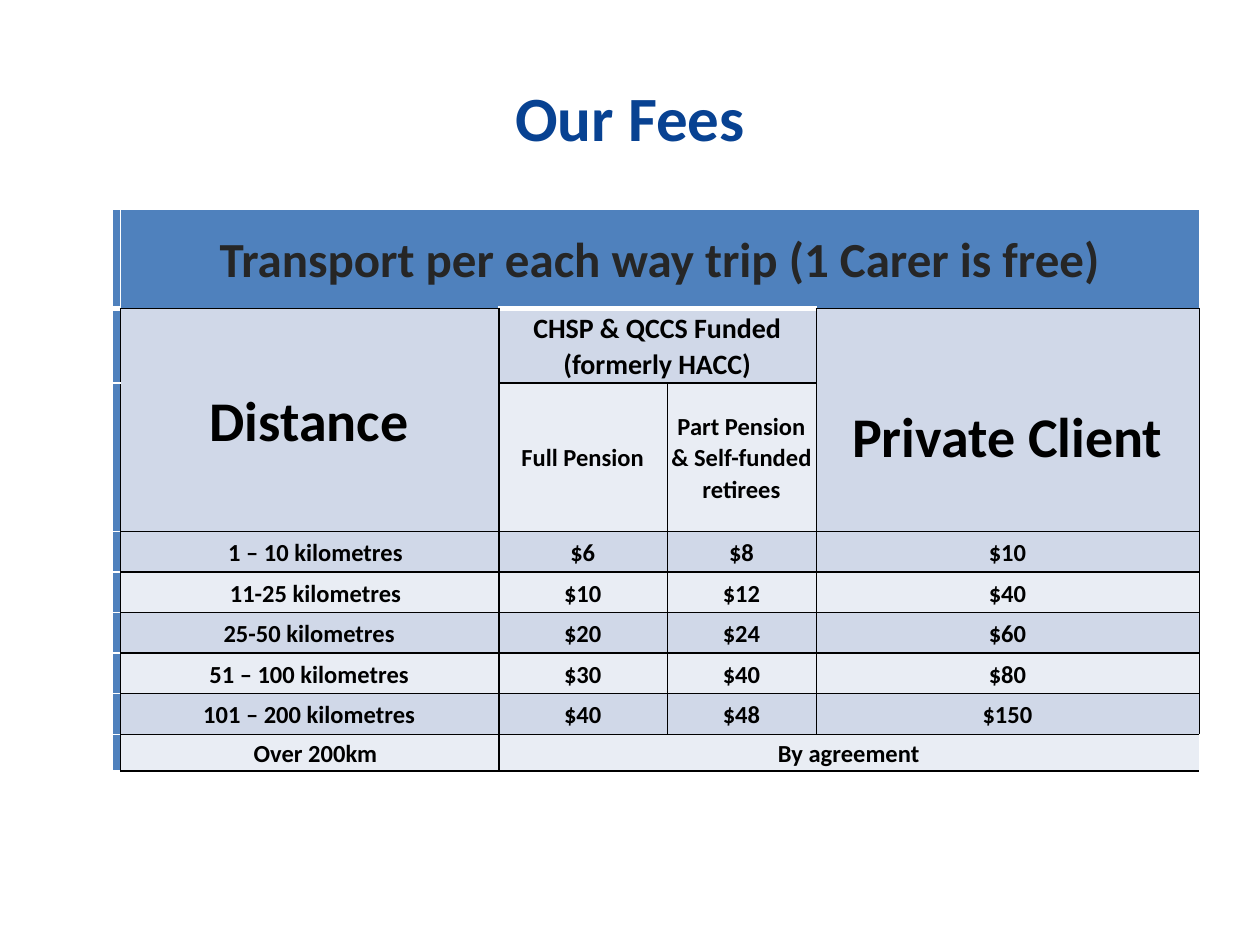
"""Build the transport fee slide."""
from dataclasses import dataclass, field
from typing import Any

from lxml.etree import SubElement
from pptx import Presentation
from pptx.dml.color import RGBColor
from pptx.enum.text import MSO_ANCHOR, PP_ALIGN
from pptx.oxml.ns import qn
from pptx.table import Table
from pptx.util import Pt


@dataclass(frozen=True)
class Theme:
    """Colours and type sizes."""
    font: str = "Calibri"
    title: str = "084292"
    heading: str = "262626"
    ink: str = "000000"
    paper: str = "FFFFFF"
    accent: str = "4F81BD"
    dark_band: str = "D0D8E8"
    light_band: str = "E9EDF4"
    title_size: int = 36
    column_size: int = 32
    heading_size: int = 28
    group_size: int = 16
    body_size: int = 14
    blank_size: int = 1


THEME = Theme()
BLACK = (THEME.ink, 1)
WHITE = (THEME.paper, 1)
WHITE_THICK = (THEME.paper, 3)
BOX = {"L": BLACK, "R": BLACK, "T": BLACK, "B": BLACK}


@dataclass(frozen=True)
class FeeCell:
    """One cell of the fee table, with its span and look."""
    row: int
    column: int
    text: str
    fill: str
    size: int = THEME.body_size
    rows: int = 1
    columns: int = 1
    colour: str = THEME.ink
    indent: float = 0
    top: float = 0.7
    edges: dict[str, tuple[str, int]] = field(default_factory=lambda: BOX)


COLUMN_WIDTHS = [3.8, 216.3, 96.3, 85.1, 218.9]
ROW_HEIGHTS = [57, 42.4, 84.9] + [23.2] * 5 + [20.9]
FEES = [
    ("1 – 10 kilometres", "$6", "$8", "$10"),
    ("11-25 kilometres", "$10", "$12", "$40"),
    ("25-50 kilometres", "$20", "$24", "$60"),
    ("51 – 100 kilometres", "$30", "$40", "$80"),
    ("101 – 200 kilometres", "$40", "$48", "$150"),
]
FIRST_FEE_ROW = 3
LAST_ROW = len(ROW_HEIGHTS) - 1
INDENTED_FEES = 2
FIRST_LINE_INDENT = 7.2


def set_all(target: Any, values: dict[str, Any]) -> None:
    """Set each named attribute on the target."""
    for name, value in values.items():
        setattr(target, name, value)


def format_font(font: Any, size: int, colour: str) -> None:
    """Apply the bold slide font."""
    set_all(font, {"name": THEME.font, "size": Pt(size), "bold": True})
    font.color.rgb = RGBColor.from_string(colour)


def draw_edge(properties: Any, side: str, colour: str, width: int) -> None:
    """Add one border to a cell."""
    edge = SubElement(properties, qn(f"a:ln{side}"), w=str(int(Pt(width))))
    SubElement(SubElement(edge, qn("a:solidFill")), qn("a:srgbClr"), val=colour)


def draw_cell(table: Table, item: FeeCell) -> None:
    """Merge, border, fill and write one cell."""
    origin = table.cell(item.row, item.column)
    last_row = item.row + item.rows - 1
    last_column = item.column + item.columns - 1
    if item.rows * item.columns > 1:
        origin.merge(table.cell(last_row, last_column))
    for row in range(item.row, last_row + 1):
        for column in range(item.column, last_column + 1):
            part = table.cell(row, column)
            set_all(part, {
                "margin_left": Pt(0.7), "margin_right": Pt(1.4),
                "margin_top": Pt(item.top), "margin_bottom": Pt(0),
                "vertical_anchor": MSO_ANCHOR.MIDDLE,
            })
            outer = {"L": column == item.column, "R": column == last_column,
                     "T": row == item.row, "B": row == last_row}
            for side, is_outer in outer.items():
                if is_outer and side in item.edges:
                    draw_edge(part._tc.get_or_add_tcPr(), side, *item.edges[side])
            part.fill.solid()
            part.fill.fore_color.rgb = RGBColor.from_string(item.fill)
    paragraph = origin.text_frame.paragraphs[0]
    if not item.text:
        SubElement(paragraph._p, qn("a:endParaRPr"), sz=str(item.size * 100))
        return
    set_all(paragraph, {"alignment": PP_ALIGN.CENTER, "line_spacing": 1.05})
    if item.indent:
        paragraph._p.get_or_add_pPr().set("indent", str(int(Pt(item.indent))))
    run = paragraph.add_run()
    run.text = item.text
    format_font(run.font, item.size, item.colour)


def heading_cells() -> list[FeeCell]:
    """Return the cells above the fees."""
    dark, light = THEME.dark_band, THEME.light_band
    return [
        FeeCell(0, 1, "Transport per each way trip (1 Carer is free)", THEME.accent,
                THEME.heading_size, columns=4, colour=THEME.heading, edges={"L": WHITE}),
        FeeCell(1, 1, "Distance", dark, THEME.column_size, rows=2),
        FeeCell(1, 2, "CHSP & QCCS Funded (formerly HACC)", dark,
                THEME.group_size, columns=2, edges=BOX | {"T": WHITE_THICK}),
        FeeCell(1, 4, "Private Client", dark, THEME.column_size, rows=2, top=18.6),
        FeeCell(2, 2, "Full Pension", light),
        FeeCell(2, 3, "Part Pension & Self-funded retirees", light),
    ]


def fee_cells() -> list[FeeCell]:
    """Return the banded fee rows and the closing row."""
    bands = (THEME.dark_band, THEME.light_band)
    cells = [
        FeeCell(FIRST_FEE_ROW + order, column, text, bands[order % 2],
                indent=FIRST_LINE_INDENT if column == 1 and order < INDENTED_FEES else 0)
        for order, fee in enumerate(FEES)
        for column, text in enumerate(fee, start=1)
    ]
    return cells + [
        FeeCell(LAST_ROW, 1, "Over 200km", THEME.light_band, indent=FIRST_LINE_INDENT),
        FeeCell(LAST_ROW, 2, "By agreement", THEME.light_band, columns=3),
    ]


def marker_cells() -> list[FeeCell]:
    """Return the narrow accent column."""
    cells = []
    for row in range(len(ROW_HEIGHTS)):
        edges = {"R": BLACK if row else WHITE}
        if row:
            edges["T"] = WHITE_THICK if row == 1 else WHITE
        if row < LAST_ROW:
            edges["B"] = WHITE if row else WHITE_THICK
        cells.append(FeeCell(row, 0, "", THEME.accent, THEME.blank_size, edges=edges))
    return cells


def main() -> None:
    """Build and save the slide."""
    deck = Presentation()
    set_all(deck, {"slide_width": Pt(720), "slide_height": Pt(540)})
    slide = deck.slides.add_slide(deck.slide_layouts[5])
    title = slide.shapes.title
    set_all(title, {"left": Pt(36), "top": Pt(21.6), "width": Pt(648), "height": Pt(90)})
    title.text_frame.text = "Our Fees"
    title.text_frame.vertical_anchor = MSO_ANCHOR.MIDDLE
    heading = title.text_frame.paragraphs[0]
    heading.alignment = PP_ALIGN.CENTER
    format_font(heading.runs[0].font, THEME.title_size, THEME.title)

    fees = slide.shapes.add_table(
        len(ROW_HEIGHTS), len(COLUMN_WIDTHS), Pt(64), Pt(119.4),
        Pt(sum(COLUMN_WIDTHS)), Pt(sum(ROW_HEIGHTS))).table
    set_all(fees, {"first_row": False, "horz_banding": False})
    for column, width in zip(fees.columns, COLUMN_WIDTHS):
        column.width = Pt(width)
    for row, height in zip(fees.rows, ROW_HEIGHTS):
        row.height = Pt(height)
    for item in marker_cells() + heading_cells() + fee_cells():
        draw_cell(fees, item)
    deck.save("out.pptx")


if __name__ == "__main__":
    main()
